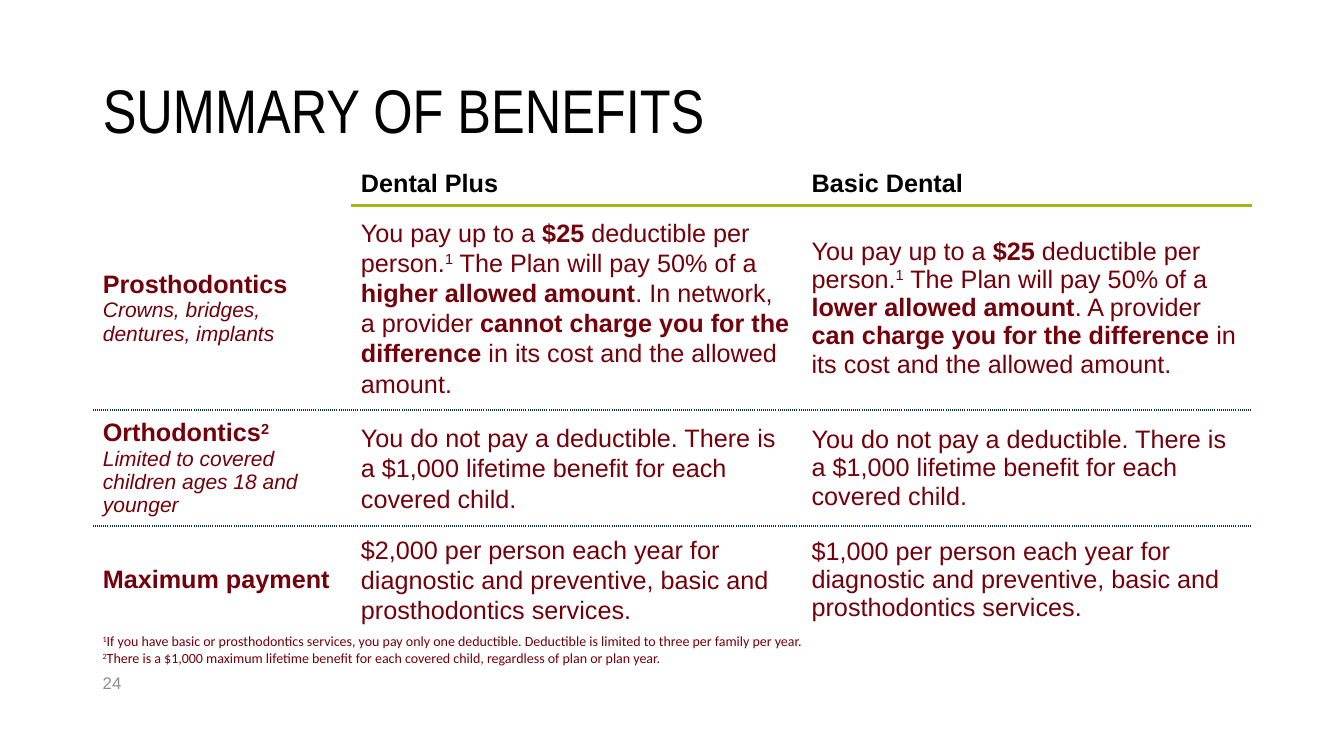
from dataclasses import dataclass
from lxml.etree import SubElement
from pptx import Presentation
from pptx.dml.color import RGBColor
from pptx.enum.text import MSO_ANCHOR, PP_ALIGN
from pptx.oxml import parse_xml
from pptx.oxml.ns import nsdecls, qn
from pptx.util import Inches, Pt


@dataclass(frozen=True)
class Theme:
    ink: str = "000000"
    maroon: str = "73000A"
    grey: str = "8C8C8C"
    green: str = "A0B810"
    navy: str = "0D3841"
    title_font: str = "Arial Narrow"
    body_font: str = "Arial"
    note_font: str = "Calibri"
    title: int = 44
    body: int = 18
    detail: int = 15
    number: int = 12
    note: int = 10


T = Theme()
PLAIN_TABLE = "{2D5ABB26-0587-4C30-8999-92F81FD0307C}"
LEFT, WIDTH = 0.92, 11.5
COLS = (2.56, 4.47, 4.47)
ROWS = (0.41, 2.03, 1.15, 1.01)

ORTHO = [[("You do not pay a deductible. There is a $1,000 lifetime benefit for each covered child.", "")]]
SERVICES = " per person each year for diagnostic and preventive, basic and prosthodontics services."
DEDUCTIBLE = [("You pay up to a ", ""), ("$25", "b"), (" deductible per person.", ""),
              ("1", "s"), (" The Plan will pay 50% of a ", "")]
BENEFITS = [
    [[], [[("Dental Plus", "b")]], [[("Basic Dental", "b")]]],
    [
        [[("Prosthodontics", "b")], [("Crowns, bridges, dentures, implants", "i")]],
        [DEDUCTIBLE + [("higher allowed amount", "b"), (". In network, a provider ", ""),
                       ("cannot charge you for the difference ", "b"),
                       ("in its cost and the allowed amount.", "")]],
        [DEDUCTIBLE + [("lower allowed amount", "b"), (". A provider ", ""),
                       ("can charge you for the difference", "b"),
                       (" in its cost and the allowed amount.", "")]],
    ],
    [
        [[("Orthodontics", "b"), ("2", "bs")],
         [("Limited to covered children ages 18 and younger", "i")]],
        ORTHO, ORTHO,
    ],
    [
        [[("Maximum payment", "b")]],
        [[("$2,000" + SERVICES, "")]],
        [[("$1,000" + SERVICES, "")]],
    ],
]
NOTES = [
    [("1", "s"), ("If you have basic or prosthodontics services, you pay only one deductible. "
                  "Deductible is limited to three per family per year.", "")],
    [("2", "s"), ("There is a $1,000 maximum lifetime benefit for each covered child, "
                  "regardless of plan or plan year.", "")],
]


def style(r, font, size, color, marks=""):
    r.font.name, r.font.size = font, Pt(size)
    r.font.color.rgb = RGBColor.from_string(color)
    r.font.bold, r.font.italic = "b" in marks, "i" in marks
    if "s" in marks:
        r._r.get_or_add_rPr().set("baseline", "30000")


def write(tf, paragraphs, font, size, color, spacing=1.0):
    for i, runs in enumerate(paragraphs):
        p = tf.add_paragraph() if i else tf.paragraphs[0]
        p.line_spacing = spacing
        for text, marks in runs:
            r = p.add_run()
            r.text = text
            style(r, font, T.detail if "i" in marks else size, color, marks)


def add_title(s, box, text):
    title = s.shapes.title
    title.left, title.top, title.width, title.height = map(Inches, box)
    tf = title.text_frame
    tf.text = text
    tf.vertical_anchor = MSO_ANCHOR.MIDDLE
    p = tf.paragraphs[0]
    p.alignment, p.line_spacing = PP_ALIGN.LEFT, 0.9
    style(p.runs[0], T.title_font, T.title, T.ink)


def add_text(s, box, paragraphs, font, size, color, anchor=MSO_ANCHOR.TOP):
    tf = s.shapes.add_textbox(*map(Inches, box)).text_frame
    tf.word_wrap, tf.vertical_anchor = True, anchor
    write(tf, paragraphs, font, size, color)


def cell_borders(cell, top, bottom):
    tcPr = cell._tc.get_or_add_tcPr()
    edges = [("lnL", None), ("lnR", None), ("lnT", top), ("lnB", bottom)]
    for i, (tag, rule) in enumerate(edges):
        ln = parse_xml(f"<a:{tag} {nsdecls('a')}/>")
        if rule:
            color, width, dash = rule
            ln.set("w", str(Pt(width)))
            fill = SubElement(ln, qn("a:solidFill"))
            SubElement(fill, qn("a:srgbClr"), val=color)
            SubElement(ln, qn("a:prstDash"), val=dash)
        else:
            SubElement(ln, qn("a:noFill"))
        tcPr.insert(i, ln)


def rule_below(row, col):
    if row == 0:
        return (T.green, 2.25, "solid") if col else None
    return (T.navy, 1.5, "sysDot") if 0 < row < len(ROWS) - 1 else None


def add_benefits(s, box):
    left, top, width, height = box
    table = s.shapes.add_table(len(ROWS), len(COLS), *map(Inches, box)).table
    table.first_row = table.horz_banding = False
    table._tbl.tblPr.find(qn("a:tableStyleId")).text = PLAIN_TABLE
    for column, share in zip(table.columns, COLS):
        column.width = Inches(width * share / sum(COLS))
    for row, share in zip(table.rows, ROWS):
        row.height = Inches(height * share / sum(ROWS))
    for i, row in enumerate(BENEFITS):
        for j, paragraphs in enumerate(row):
            cell = table.cell(i, j)
            cell.fill.background()
            cell.vertical_anchor = MSO_ANCHOR.MIDDLE if i else MSO_ANCHOR.TOP
            write(cell.text_frame, paragraphs, T.body_font, T.body,
                  T.maroon if i else T.ink, 1.07 if i and j == 1 else 1.0)
            cell_borders(cell, rule_below(i - 1, j) if i else None, rule_below(i, j))


def main():
    prs = Presentation()
    prs.slide_width, prs.slide_height = Inches(13.33), Inches(7.5)
    s = prs.slides.add_slide(prs.slide_layouts[5])
    add_title(s, (LEFT, 0.4, WIDTH, 1.45), "SUMMARY OF BENEFITS")
    add_text(s, (LEFT, 6.57, WIDTH / 4, 0.4), [[("24", "")]],
             T.body_font, T.number, T.grey, MSO_ANCHOR.MIDDLE)
    add_text(s, (LEFT, 6.23, 9, 0.44), NOTES, T.note_font, T.note, T.maroon)
    add_benefits(s, (LEFT, 1.63, WIDTH, sum(ROWS)))
    prs.save("out.pptx")


if __name__ == "__main__":
    main()
